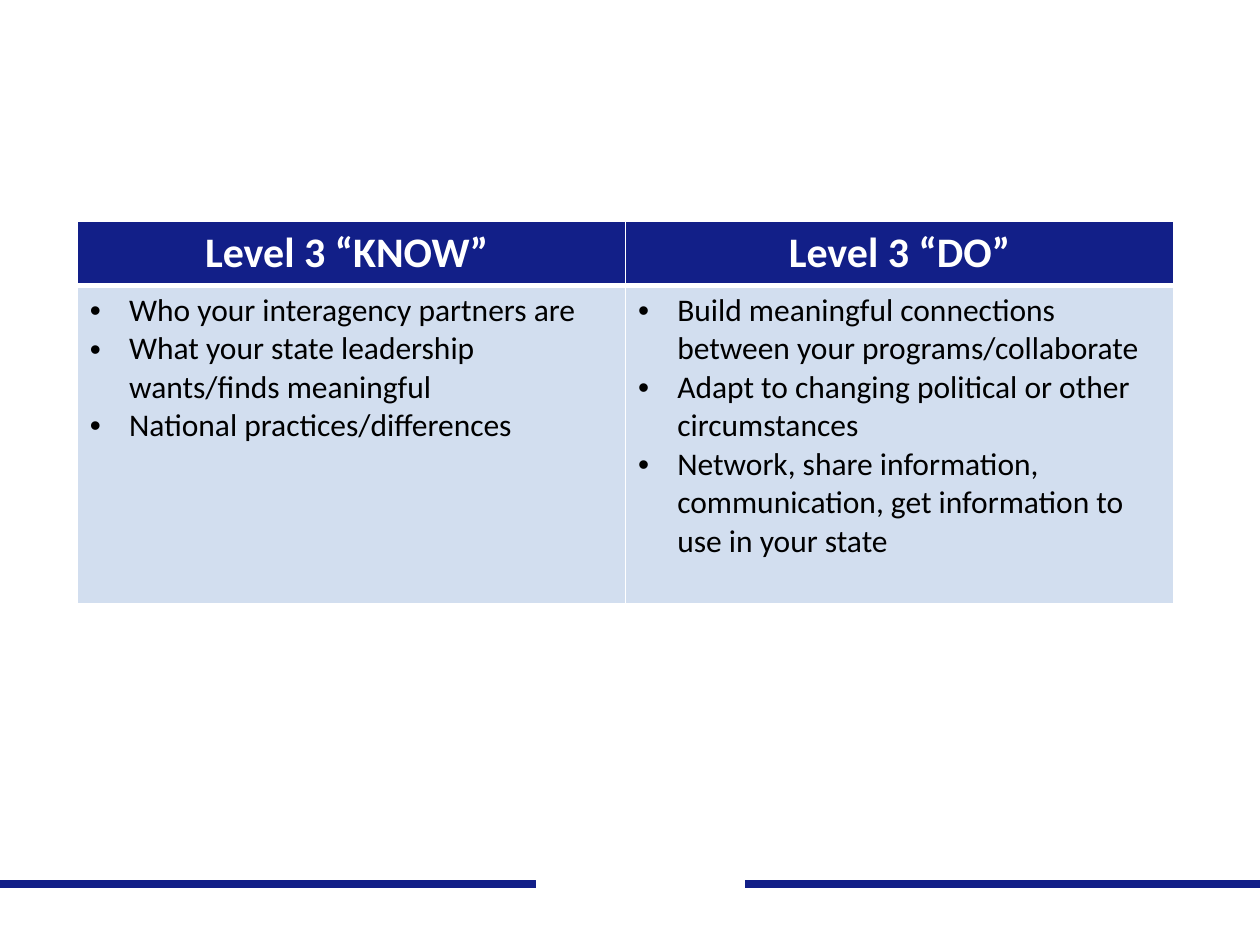
from dataclasses import dataclass

from lxml.etree import SubElement
from pptx import Presentation
from pptx.dml.color import RGBColor
from pptx.enum.shapes import MSO_CONNECTOR
from pptx.enum.text import PP_ALIGN
from pptx.oxml.ns import qn
from pptx.util import Cm, Pt


@dataclass(frozen=True)
class Theme:
    font: str = "Calibri"
    navy: str = "121F88"
    pale: str = "D2DEEF"
    white: str = "FFFFFF"
    black: str = "000000"
    header_size: int = 24
    body_size: int = 18
    rule: float = 4.5
    border: int = 1
    header_border: int = 3


THEME = Theme()

COLUMNS = [
    ("Level 3 “KNOW” ", [
        "Who your interagency partners are",
        "What your state leadership wants/finds meaningful",
        "National practices/differences",
    ]),
    ("Level 3 “DO”", [
        "Build meaningful connections between your programs/collaborate",
        "Adapt to changing political or other circumstances",
        "Network, share information, communication, get information to use in your state",
    ]),
]


def add_span(para, text, size, color, bold=False):
    span = para.add_run()
    span.text = text
    span.font.name = THEME.font
    span.font.size = Pt(size)
    span.font.bold = bold
    span.font.color.rgb = RGBColor.from_string(color)


def add_bullet(para):
    """Give the paragraph a round bullet with a hanging indent."""
    properties = para._p.get_or_add_pPr()
    indent = Cm(0.79)
    properties.set("marL", str(indent))
    properties.set("indent", str(-indent))
    SubElement(properties, qn("a:buFont"), typeface="Arial")
    SubElement(properties, qn("a:buChar"), char="•")


def style_cell(cell, color, borders):
    """Draw white borders, given as side and width, then the fill."""
    properties = cell._tc.get_or_add_tcPr()
    for side, width in borders.items():
        line = SubElement(properties, qn(f"a:ln{side}"), w=str(Pt(width)))
        fill = SubElement(line, qn("a:solidFill"))
        SubElement(fill, qn("a:srgbClr"), val=THEME.white)
    cell.fill.solid()
    cell.fill.fore_color.rgb = RGBColor.from_string(color)


def fill_header(cell, heading):
    thin = THEME.border
    style_cell(cell, THEME.navy,
               {"L": thin, "R": thin, "T": thin, "B": THEME.header_border})
    para = cell.text_frame.paragraphs[0]
    para.alignment = PP_ALIGN.CENTER
    add_span(para, heading, THEME.header_size, THEME.white, bold=True)


def fill_body(cell, items):
    thin = THEME.border
    style_cell(cell, THEME.pale,
               {"L": thin, "R": thin, "T": THEME.header_border, "B": thin})
    frame = cell.text_frame
    for index, item in enumerate(items):
        para = frame.add_paragraph() if index else frame.paragraphs[0]
        add_bullet(para)
        add_span(para, item, THEME.body_size, THEME.black)


def add_level_table(page, left, top, width, height):
    header_height = Cm(1.29)
    table = page.shapes.add_table(
        2, len(COLUMNS), left, top, width, height).table
    table.rows[0].height = header_height
    table.rows[1].height = height - header_height
    for index, (heading, items) in enumerate(COLUMNS):
        table.columns[index].width = width // len(COLUMNS)
        fill_header(table.cell(0, index), heading)
        fill_body(table.cell(1, index), items)


def add_rule(page, start, end, top, color):
    rule = page.shapes.add_connector(
        MSO_CONNECTOR.STRAIGHT, start, top, end, top)
    rule.line.color.rgb = RGBColor.from_string(color)
    rule.line.width = Pt(THEME.rule)
    SubElement(rule._element.spPr, qn("a:effectLst"))


def add_footer(page, left, top, width):
    """Draw a navy rule across the box with a white gap in its middle."""
    add_rule(page, left, left + width, top, THEME.navy)
    add_rule(page, left + Cm(10.8), left + Cm(15.01), top, THEME.white)


def main():
    deck = Presentation()
    deck.slide_width, deck.slide_height = Cm(25.4), Cm(19.05)
    page = deck.slides.add_slide(deck.slide_layouts[6])
    add_footer(page, Cm(0), Cm(17.83), deck.slide_width)
    add_level_table(page, Cm(1.56), Cm(4.46), Cm(22.1), Cm(7.71))
    deck.save("out.pptx")


if __name__ == "__main__":
    main()
